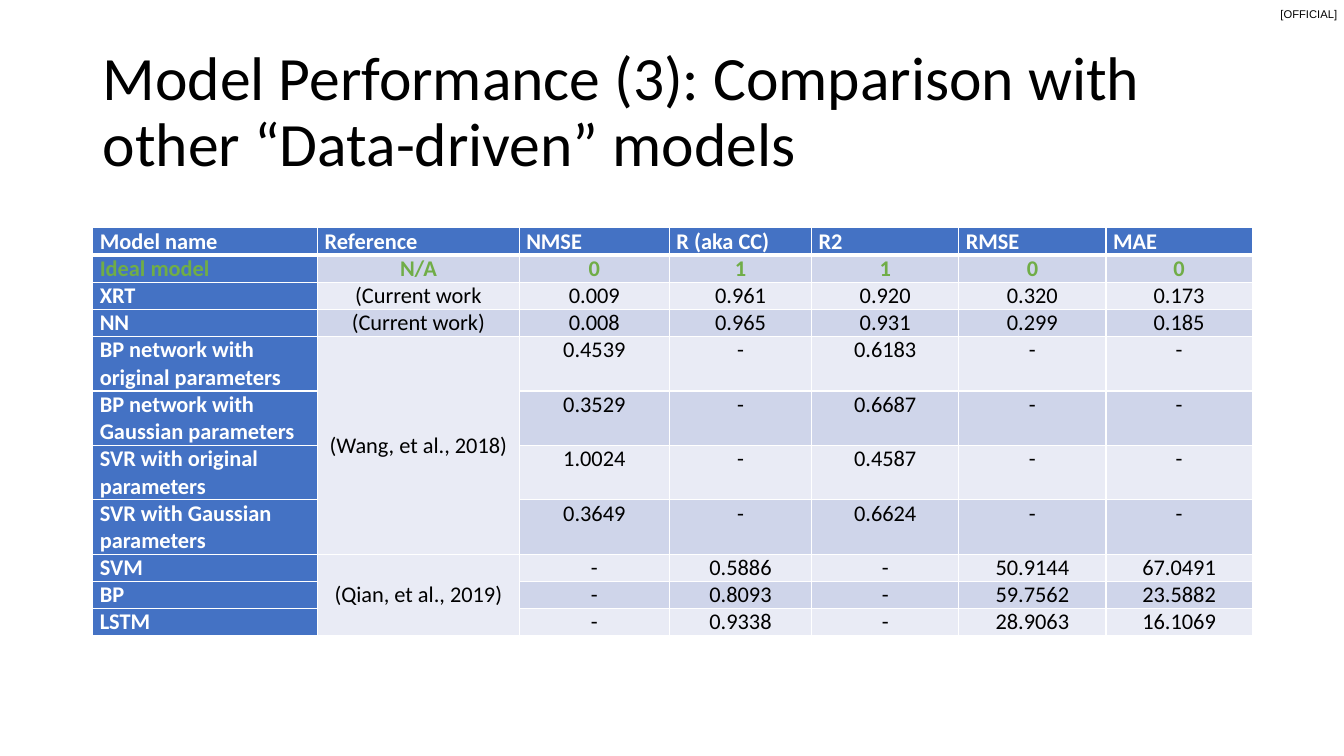
import pptx
import pptx.dml.color
import pptx.enum.text
import pptx.oxml
import pptx.oxml.ns
import pptx.util

Inches = pptx.util.Inches
Pt = pptx.util.Pt
RGBColor = pptx.dml.color.RGBColor
ALIGN = pptx.enum.text.PP_ALIGN
ANCHOR = pptx.enum.text.MSO_ANCHOR

BLACK = RGBColor(0x00, 0x00, 0x00)
WHITE = RGBColor(0xFF, 0xFF, 0xFF)
BLUE = RGBColor(0x44, 0x72, 0xC4)
GREEN = RGBColor(0x70, 0xAD, 0x47)
BAND_DARK = RGBColor(0xCF, 0xD5, 0xEA)
BAND_LIGHT = RGBColor(0xE9, 0xEB, 0xF5)

COLUMN_WIDTHS = [2.23, 2, 1.49, 1.41, 1.46, 1.46, 1.45]
LINE_HEIGHT = 0.27
WANG = "(Wang, et al., 2018)"
QIAN = "(Qian, et al., 2019)"
# A reference of None continues the merged cell above it.
MODELS = [
    ["Model name", "Reference", "NMSE", "R (aka CC)", "R2", "RMSE", "MAE"],
    ["Ideal model", "N/A", "0", "1", "1", "0", "0"],
    ["XRT", "(Current work", "0.009", "0.961", "0.920", "0.320", "0.173"],
    ["NN", "(Current work)", "0.008", "0.965", "0.931", "0.299", "0.185"],
    ["BP network with original parameters", WANG, "0.4539", "-", "0.6183", "-", "-"],
    ["BP network with Gaussian parameters", None, "0.3529", "-", "0.6687", "-", "-"],
    ["SVR with original parameters", None, "1.0024", "-", "0.4587", "-", "-"],
    ["SVR with Gaussian parameters", None, "0.3649", "-", "0.6624", "-", "-"],
    ["SVM", QIAN, "-", "0.5886", "-", "50.9144", "67.0491"],
    ["BP", None, "-", "0.8093", "-", "59.7562", "23.5882"],
    ["LSTM", None, "-", "0.9338", "-", "28.9063", "16.1069"],
]
MERGED_REFERENCES = [(4, 7), (8, 10)]
TWO_LINE_ROWS = range(4, 8)


def add_run(p, text, size, color, bold=False, font="Calibri"):
    r = p.add_run()
    r.text = text
    r.font.name = font
    r.font.size = Pt(size)
    r.font.bold = bold
    r.font.color.rgb = color


def add_text(slide, box, text, size, font="Calibri", inset=(0, 0), wrap=True):
    """Add a text box; inset is the horizontal and vertical margin."""
    sp = slide.shapes.add_textbox(*(Inches(v) for v in box))
    tf = sp.text_frame
    tf.word_wrap = wrap
    tf.margin_left = tf.margin_right = Inches(inset[0])
    tf.margin_top = tf.margin_bottom = Inches(inset[1])
    add_run(tf.paragraphs[0], text, size, BLACK, font=font)
    return tf


def set_borders(cell, top, bottom):
    """Draw white cell borders, 1 pt at the sides."""
    tc_pr = cell._tc.get_or_add_tcPr()
    for side, width in (("L", 1), ("R", 1), ("T", top), ("B", bottom)):
        tc_pr.append(pptx.oxml.parse_xml(
            f'<a:ln{side} {pptx.oxml.ns.nsdecls("a")} w="{Pt(width)}">'
            f'<a:solidFill><a:srgbClr val="{WHITE}"/></a:solidFill></a:ln{side}>'))


def cell_style(row, col):
    """Return fill, text colour and bold for a table position."""
    heading = row == 0 or col == 0
    if heading:
        fill = BLUE
    else:
        fill = BAND_DARK if row % 2 else BAND_LIGHT
    if row == 1:
        return fill, GREEN, True
    return fill, WHITE if heading else BLACK, heading


def format_cell(cell, row, col, text):
    fill, color, bold = cell_style(row, col)
    set_borders(cell, 3 if row == 1 else 1, 3 if row == 0 else 1)
    cell.fill.solid()
    cell.fill.fore_color.rgb = fill
    cell.margin_left = cell.margin_right = Inches(0.07)
    cell.margin_top = cell.margin_bottom = 0
    p = cell.text_frame.paragraphs[0]
    if row and col:
        p.alignment = ALIGN.CENTER
    if text is None:
        p.font.size = Pt(16)
    else:
        add_run(p, text, 16, color, bold)


def add_model_table(slide):
    heights = [LINE_HEIGHT * (2 if i in TWO_LINE_ROWS else 1) for i in range(len(MODELS))]
    table = slide.shapes.add_table(
        len(MODELS), len(COLUMN_WIDTHS), Inches(0.92), Inches(2.26),
        Inches(sum(COLUMN_WIDTHS)), Inches(sum(heights))).table
    for column, width in zip(table.columns, COLUMN_WIDTHS):
        column.width = Inches(width)
    for i, (values, height) in enumerate(zip(MODELS, heights)):
        table.rows[i].height = Inches(height)
        for j, text in enumerate(values):
            format_cell(table.cell(i, j), i, j, text)
    for first, last in MERGED_REFERENCES:
        table.cell(first, 1).merge(table.cell(last, 1))
        table.cell(first, 1).vertical_anchor = ANCHOR.MIDDLE


def main():
    prs = pptx.Presentation()
    prs.slide_width = Inches(13.33)
    prs.slide_height = Inches(7.5)
    slide = prs.slides.add_slide(prs.slide_layouts[6])

    add_text(slide, (12.7, 0.07, 0.6, 0.13), "[OFFICIAL]", 8, font="Arial", wrap=False)
    title = add_text(slide, (0.92, 0.4, 11.5, 1.45),
                     "Model Performance (3): Comparison with other “Data-driven” models",
                     44, inset=(0.1, 0.05))
    title.vertical_anchor = ANCHOR.MIDDLE
    title.paragraphs[0].line_spacing = 0.9
    add_model_table(slide)

    prs.save("out.pptx")


if __name__ == "__main__":
    main()
